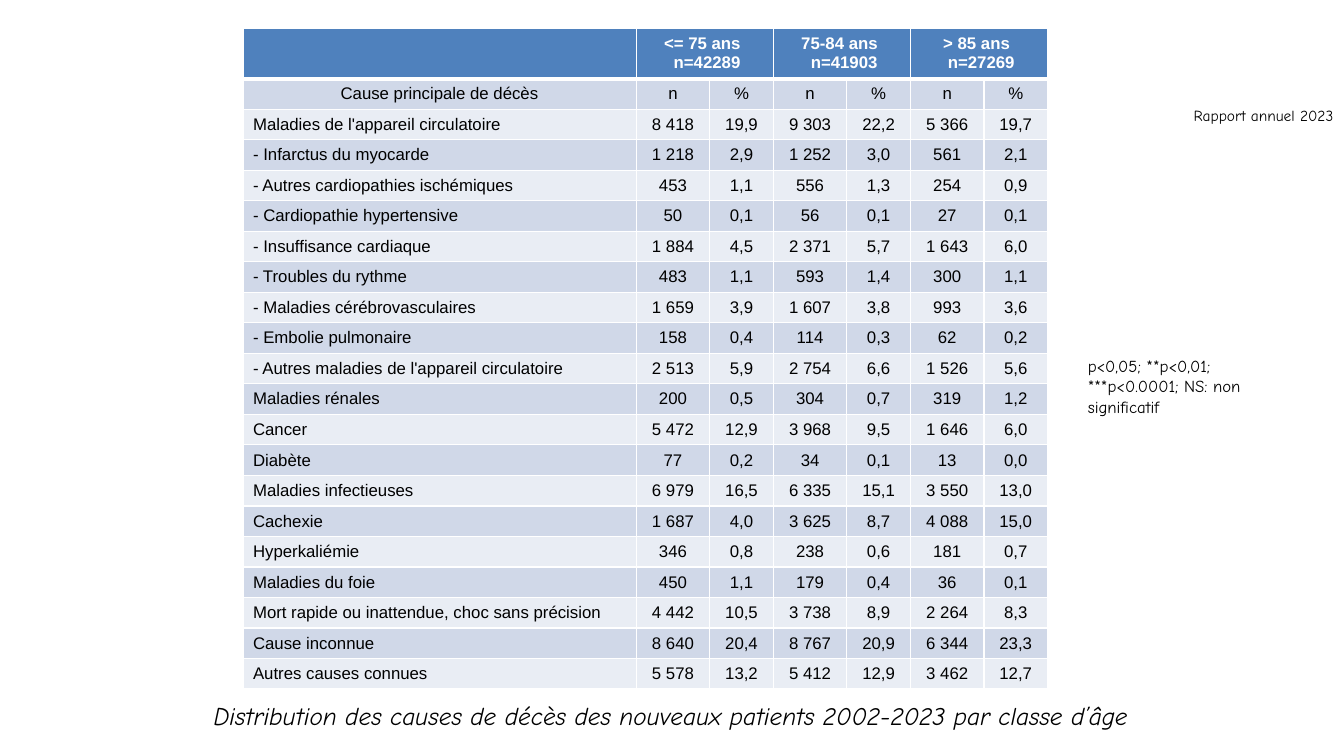
from lxml.etree import SubElement
from pptx import Presentation
from pptx.dml.color import RGBColor
from pptx.enum.text import MSO_ANCHOR, MSO_AUTO_SIZE, PP_ALIGN
from pptx.oxml.ns import qn
from pptx.util import Inches, Pt

BLACK = RGBColor(0x00, 0x00, 0x00)
WHITE = RGBColor(0xFF, 0xFF, 0xFF)
HEADER_BLUE = RGBColor(0x4F, 0x81, 0xBD)
BANDS = (RGBColor(0xD0, 0xD8, 0xE8), RGBColor(0xE9, 0xED, 0xF4))

GRID_COLUMNS, GRID_ROWS = 133.3, 75
HEADER_HEIGHT, TABLE_HEIGHT = 4.7, 65.3
COLUMN_WIDTHS = (39,) + (7.3, 6.3) * 3

AGE_GROUPS = ("<= 75 ans \n n=42289", "75-84 ans \n n=41903", "> 85 ans \n n=27269")
CAUSES = (
    "Cause principale de décès|n|%|n|%|n|%",
    "Maladies de l'appareil circulatoire|8 418|19,9|9 303|22,2|5 366|19,7",
    "- Infarctus du myocarde|1 218|2,9|1 252|3,0|561|2,1",
    "- Autres cardiopathies ischémiques|453|1,1|556|1,3|254|0,9",
    "- Cardiopathie hypertensive|50|0,1|56|0,1|27|0,1",
    "- Insuffisance cardiaque|1 884|4,5|2 371|5,7|1 643|6,0",
    "- Troubles du rythme|483|1,1|593|1,4|300|1,1",
    "- Maladies cérébrovasculaires|1 659|3,9|1 607|3,8|993|3,6",
    "- Embolie pulmonaire|158|0,4|114|0,3|62|0,2",
    "- Autres maladies de l'appareil circulatoire|2 513|5,9|2 754|6,6|1 526|5,6",
    "Maladies rénales|200|0,5|304|0,7|319|1,2",
    "Cancer|5 472|12,9|3 968|9,5|1 646|6,0",
    "Diabète|77|0,2|34|0,1|13|0,0",
    "Maladies infectieuses|6 979|16,5|6 335|15,1|3 550|13,0",
    "Cachexie|1 687|4,0|3 625|8,7|4 088|15,0",
    "Hyperkaliémie|346|0,8|238|0,6|181|0,7",
    "Maladies du foie|450|1,1|179|0,4|36|0,1",
    "Mort rapide ou inattendue, choc sans précision|4 442|10,5|3 738|8,9|2 264|8,3",
    "Cause inconnue|8 640|20,4|8 767|20,9|6 344|23,3",
    "Autres causes connues|5 578|13,2|5 412|12,9|3 462|12,7",
)


def write(frame, text, font="Comic Neue", size=12, color=BLACK, bold=False,
          italic=False, align=PP_ALIGN.LEFT, indent=0):
    for index, line in enumerate(text.split("\n")):
        para = frame.paragraphs[0] if index == 0 else frame.add_paragraph()
        para.alignment = align
        if indent:
            para._p.get_or_add_pPr().set("marL", str(Inches(indent)))
        span = para.add_run()
        span.text = line
        span.font.name, span.font.size = font, Pt(size)
        span.font.bold, span.font.italic = bold, italic
        span.font.color.rgb = color


class SlideBuilder:
    """Places text and tables on one slide by grid columns and rows."""

    def __init__(self, deck):
        self.column = deck.slide_width / GRID_COLUMNS
        self.row = deck.slide_height / GRID_ROWS
        self.page = deck.slides.add_slide(deck.slide_layouts[6])

    def place(self, left, top, width, height):
        return (round(left * self.column), round(top * self.row),
                round(width * self.column), round(height * self.row))

    def text(self, area, text, wrap=True, anchor=MSO_ANCHOR.TOP, **style):
        frame = self.page.shapes.add_textbox(*self.place(*area)).text_frame
        frame.word_wrap = wrap
        frame.auto_size = MSO_AUTO_SIZE.SHAPE_TO_FIT_TEXT
        frame.vertical_anchor = anchor
        write(frame, text, **style)

    def border(self, cell, **widths):
        properties = cell._tc.get_or_add_tcPr()
        for side in "LRTB":
            line = SubElement(properties, qn(f"a:ln{side}"),
                              w=str(Pt(widths.get(side, 1))))
            fill = SubElement(line, qn("a:solidFill"))
            SubElement(fill, qn("a:srgbClr"), val=str(WHITE))

    def cell(self, cell, fill, text="", **style):
        cell.fill.solid()
        cell.fill.fore_color.rgb = fill
        cell.vertical_anchor = MSO_ANCHOR.MIDDLE
        if text:
            write(cell.text_frame, text, font="Arial", **style)

    def table(self, left, top):
        area = self.place(left, top, sum(COLUMN_WIDTHS), TABLE_HEIGHT)
        table = self.page.shapes.add_table(
            len(CAUSES) + 1, len(COLUMN_WIDTHS), *area).table
        for column, width in zip(table.columns, COLUMN_WIDTHS):
            column.width = round(width * self.column)
        body_height = (TABLE_HEIGHT - HEADER_HEIGHT) / len(CAUSES)
        for index, row in enumerate(table.rows):
            row.height = round((body_height if index else HEADER_HEIGHT) * self.row)
            for cell in row.cells:
                self.border(cell, **{0: {"B": 3}, 1: {"T": 3}}.get(index, {}))
        headings = [""]
        for group in AGE_GROUPS:
            headings += [group, ""]
        for index, heading in enumerate(headings):
            self.cell(table.cell(0, index), HEADER_BLUE, heading, color=WHITE,
                      bold=True, align=PP_ALIGN.CENTER)
        for index in range(1, len(COLUMN_WIDTHS), 2):
            table.cell(0, index).merge(table.cell(0, index + 1))
        for row, cause in enumerate(CAUSES):
            for index, value in enumerate(cause.split("|")):
                is_label = row > 0 and index == 0
                self.cell(table.cell(row + 1, index), BANDS[row % 2], value,
                          align=PP_ALIGN.LEFT if is_label else PP_ALIGN.CENTER)


def main():
    deck = Presentation()
    deck.slide_width, deck.slide_height = Inches(13.33), Inches(7.5)
    slide = SlideBuilder(deck)
    slide.text((117.4, 10, 16.9, 2.9), "Rapport annuel 2023", wrap=False, size=11)
    slide.text((17.2, 69, 107.4, 4),
               "Distribution des causes de décès des nouveaux patients 2002-2023 "
               "par classe d’âge", size=18, italic=True, indent=0.3)
    slide.text((106.9, 34.7, 22.5, 7.1),
               "p<0,05; **p<0,01; ***p<0.0001; NS: non significatif",
               anchor=MSO_ANCHOR.BOTTOM)
    slide.table(24.1, 2.8)
    deck.save("out.pptx")


if __name__ == "__main__":
    main()
